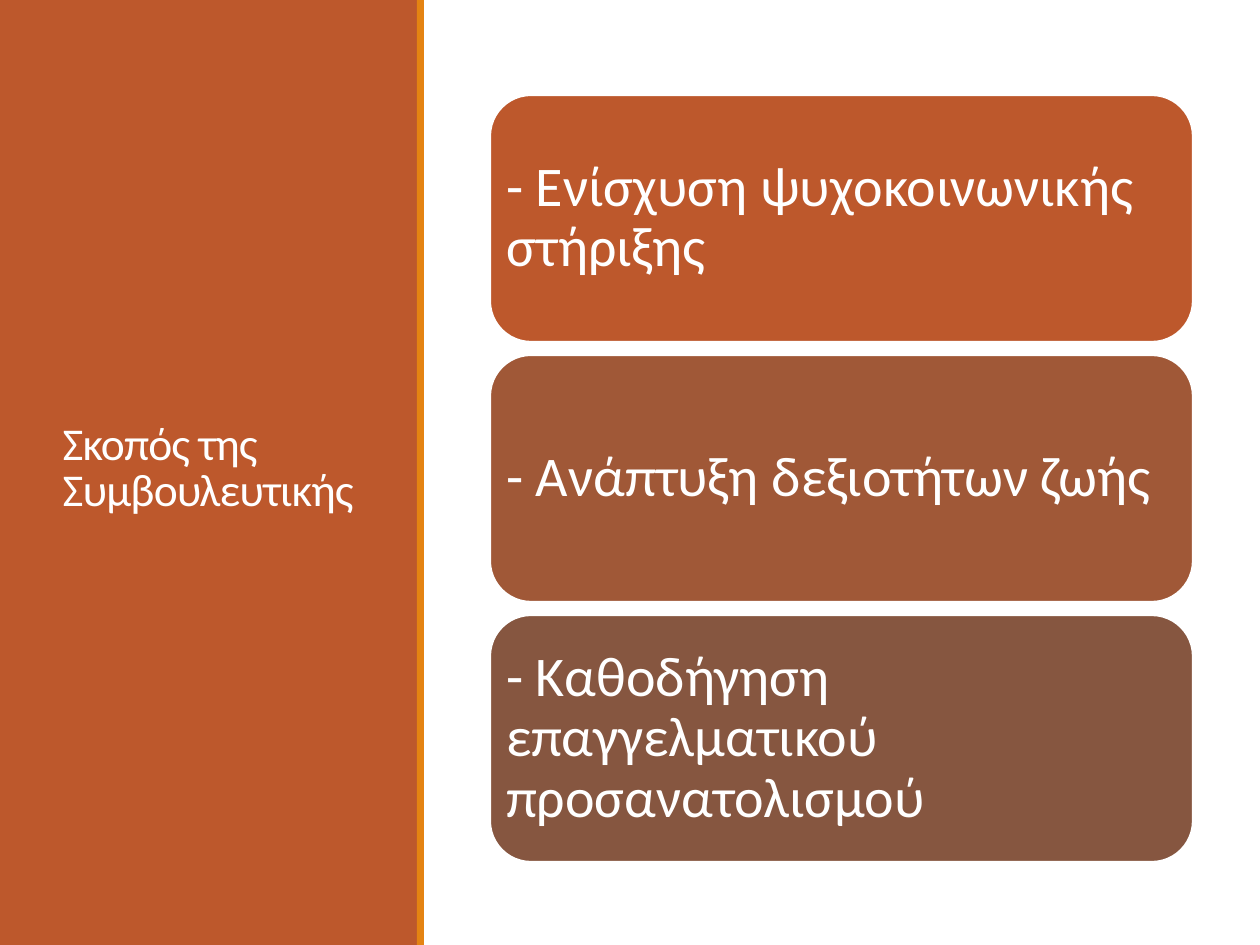
from pptx import Presentation
from pptx.dml.color import RGBColor
from pptx.enum.shapes import MSO_SHAPE
from pptx.enum.text import MSO_ANCHOR, MSO_AUTO_SIZE, PP_ALIGN
from pptx.util import Emu, Pt

RECTANGLE = MSO_SHAPE.RECTANGLE
ROUNDED = MSO_SHAPE.ROUNDED_RECTANGLE
MIDDLE = MSO_ANCHOR.MIDDLE
NO_AUTOFIT = MSO_AUTO_SIZE.NONE
LEFT = PP_ALIGN.LEFT

EMU_PER_PX = 914400 / 126
PAGE_WIDTH, PAGE_HEIGHT = 1260, 945
TITLE_ONLY = 5
FONT = "Calibri"
COLORS = {
    "white": "FFFFFF",
    "panel": "BD582C",
    "accent": "E48312",
    "support": "BD582C",
    "skills": "A05837",
    "guidance": "865640",
}
CARDS = [
    ("- Ενίσχυση ψυχοκοινωνικής στήριξης", "support"),
    ("- Ανάπτυξη δεξιοτήτων ζωής", "skills"),
    ("- Καθοδήγηση επαγγελματικού προσανατολισμού", "guidance"),
]
CARD_LEFT, CARD_TOP, CARD_WIDTH, CARD_HEIGHT = 490, 95, 703, 247
CARD_PITCH = 260
CARD_INSET = 4


def px(length):
    return Emu(round(length * EMU_PER_PX))


def color(name):
    return RGBColor.from_string(COLORS[name])


def set_attributes(target, values):
    for name, value in values.items():
        setattr(target, name, value)


def add_box(page, preset, area, fill):
    box = page.shapes.add_shape(preset, *map(px, area))
    box.shadow.inherit = False
    box.fill.solid()
    box.fill.fore_color.rgb = color(fill)
    box.line.fill.background()
    return box


def write_text(box, text, size, line_spacing):
    frame = box.text_frame
    set_attributes(frame, {"word_wrap": True, "auto_size": NO_AUTOFIT, "vertical_anchor": MIDDLE})
    para = frame.paragraphs[0]
    set_attributes(para, {"alignment": LEFT, "line_spacing": line_spacing})
    span = para.add_run()
    span.text = text
    set_attributes(span.font, {"name": FONT, "size": Pt(size), "bold": False})
    span.font.color.rgb = color("white")
    return span


def place_title(page, panel):
    title = page.shapes.title
    set_attributes(title, {"left": px(50), "top": px(72), "width": px(319), "height": px(795)})
    span = write_text(title, "Σκοπός της Συμβουλευτικής", 26, 0.85)
    span.font._element.set("spc", "-50")
    panel.element.addnext(title.element)


def add_card(page, index, text, fill):
    top = CARD_TOP + index * CARD_PITCH
    card = add_box(page, ROUNDED, (CARD_LEFT, top, CARD_WIDTH, CARD_HEIGHT), fill)
    card.line.color.rgb = color("white")
    card.line.width = Pt(1.25)
    sides = ("left", "top", "right", "bottom")
    set_attributes(card.text_frame, {f"margin_{side}": px(CARD_INSET) for side in sides})
    write_text(card, text, 32, 0.9)


def main():
    deck = Presentation()
    set_attributes(deck, {"slide_width": px(PAGE_WIDTH), "slide_height": px(PAGE_HEIGHT)})
    page = deck.slides.add_slide(deck.slide_layouts[TITLE_ONLY])
    page.background.fill.solid()
    page.background.fill.fore_color.rgb = color("white")
    panel = add_box(page, RECTANGLE, (0, 0, 418, PAGE_HEIGHT), "panel")
    place_title(page, panel)
    add_box(page, RECTANGLE, (417, 0, 7, PAGE_HEIGHT), "accent")
    for index, (text, fill) in enumerate(CARDS):
        add_card(page, index, text, fill)
    deck.save("out.pptx")


if __name__ == "__main__":
    main()
